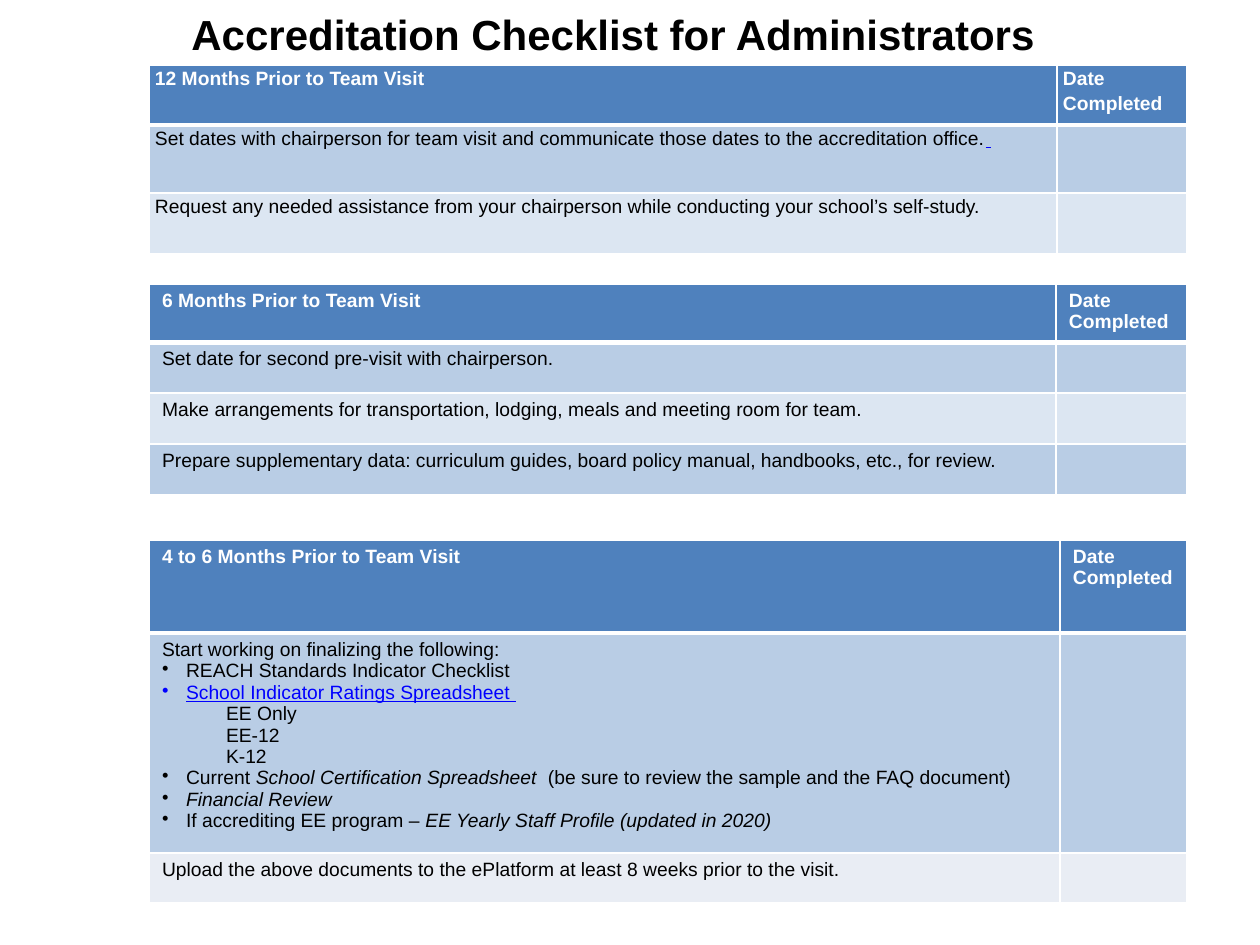
import pptx
import pptx.util
import pptx.dml.color
import pptx.enum.text
import pptx.oxml
import pptx.oxml.ns

PX = 914400 // 126
WHITE = pptx.dml.color.RGBColor(0xFF, 0xFF, 0xFF)
BLACK = pptx.dml.color.RGBColor(0x00, 0x00, 0x00)
LINK_BLUE = pptx.dml.color.RGBColor(0x00, 0x00, 0xFF)
HEADER_BLUE = pptx.dml.color.RGBColor(0x4F, 0x81, 0xBD)
MID_BLUE = pptx.dml.color.RGBColor(0xB9, 0xCD, 0xE5)
PALE_BLUE = pptx.dml.color.RGBColor(0xDC, 0xE6, 0xF2)
PALE_GREY = pptx.dml.color.RGBColor(0xE9, 0xED, 0xF4)

TABLE_LEFT, TABLE_WIDTH = 149, 1038
BULLET_INDENT, SUB_INDENT = 24, 64


def add_run(paragraph, text, size, color, style=""):
    run = paragraph.add_run()
    run.text = text
    run.font.name = "Arial"
    run.font.size = pptx.util.Pt(size)
    run.font.color.rgb = color
    run.font.bold = "bold" in style
    run.font.italic = "italic" in style
    run.font.underline = "underline" in style


def add_borders(cell, bottom_width):
    properties = cell._tc.get_or_add_tcPr()
    for side, width in (("L", 1), ("R", 1), ("T", 1), ("B", bottom_width)):
        properties.append(pptx.oxml.parse_xml(
            f'<a:ln{side} {pptx.oxml.ns.nsdecls("a")} w="{pptx.util.Pt(width)}">'
            f'<a:solidFill><a:srgbClr val="{WHITE}"/></a:solidFill></a:ln{side}>'))


presentation = pptx.Presentation()
presentation.slide_width = pptx.util.Inches(10)
presentation.slide_height = pptx.util.Inches(7.5)
slide = presentation.slides.add_slide(presentation.slide_layouts[6])

# Title
title = slide.shapes.add_textbox(179 * PX, 0, 1018 * PX, 86 * PX)
title.text_frame.word_wrap = True
title.text_frame.margin_top = 9 * PX
title.text_frame.vertical_anchor = pptx.enum.text.MSO_ANCHOR.TOP
add_run(title.text_frame.paragraphs[0], "Accreditation Checklist for Administrators",
        24, BLACK, "bold")

# Paragraphs are (layout, runs); runs are (text, colour, style)
documents = [
    ("plain", [("Start working on finalizing the following:", BLACK, "")]),
    ("bullet", [("REACH Standards Indicator Checklist", BLACK, "")]),
    ("bullet", [("School Indicator Ratings Spreadsheet ", LINK_BLUE, "underline")]),
    ("sub", [("EE Only", BLACK, "")]),
    ("sub", [("EE-12", BLACK, "")]),
    ("sub", [("K-12", BLACK, "")]),
    ("bullet", [("Current ", BLACK, ""),
                ("School Certification Spreadsheet  ", BLACK, "italic"),
                ("(be sure to review the sample and the FAQ document)", BLACK, "")]),
    ("bullet", [("Financial Review", BLACK, "italic")]),
    ("bullet", [("If accrediting EE program – ", BLACK, ""),
                ("EE Yearly Staff Profile (updated in 2020)", BLACK, "italic")]),
]
set_dates = [("plain", [
    ("Set dates with chairperson for team visit and communicate those dates "
     "to the accreditation office.", BLACK, ""),
    (" ", LINK_BLUE, "underline")])]

# Checklists: top, date column width, side margin, top margin, line spacing,
# heading, header height, rows of (height, fill, content)
checklists = [
    (65, 130, 6, 0, 1.15, "12 Months Prior to Team Visit", 60, [
        (68, MID_BLUE, set_dates),
        (61, PALE_BLUE, "Request any needed assistance from your chairperson while "
                        "conducting your school’s self-study."),
    ]),
    (284, 131, 13, 6, 1, "6 Months Prior to Team Visit", 54, [
        (51, MID_BLUE, "Set date for second pre-visit with chairperson."),
        (51, PALE_BLUE, "Make arrangements for transportation, lodging, meals and "
                        "meeting room for team."),
        (51, MID_BLUE, "Prepare supplementary data: curriculum guides, board policy "
                       "manual, handbooks, etc., for review."),
    ]),
    (540, 127, 13, 6, 1, "4 to 6 Months Prior to Team Visit", 93, [
        (206, MID_BLUE, documents),
        (50, PALE_GREY, "Upload the above documents to the ePlatform at least 8 weeks "
                        "prior to the visit."),
    ]),
]

for (top, date_width, side_margin, top_margin, spacing,
     heading, header_height, items) in checklists:
    rows = [(header_height, HEADER_BLUE, heading, "Date Completed")]
    rows += [(height, fill, content, "") for height, fill, content in items]
    table = slide.shapes.add_table(
        len(rows), 2, TABLE_LEFT * PX, top * PX, TABLE_WIDTH * PX,
        sum(row[0] for row in rows) * PX).table
    table.columns[0].width = (TABLE_WIDTH - date_width) * PX
    table.columns[1].width = date_width * PX

    for row_index, (height, fill, *contents) in enumerate(rows):
        table.rows[row_index].height = height * PX
        is_header = row_index == 0
        for column_index, content in enumerate(contents):
            cell = table.cell(row_index, column_index)
            add_borders(cell, 3 if is_header else 1)
            cell.fill.solid()
            cell.fill.fore_color.rgb = fill
            cell.margin_left = cell.margin_right = side_margin * PX
            cell.margin_top = cell.margin_bottom = top_margin * PX
            if not content:
                cell.text_frame.paragraphs[0].font.size = pptx.util.Pt(11)
                continue
            if isinstance(content, str):
                color, style = (WHITE, "bold") if is_header else (BLACK, "")
                content = [("plain", [(content, color, style)])]

            for index, (layout, runs) in enumerate(content):
                frame = cell.text_frame
                paragraph = frame.add_paragraph() if index else frame.paragraphs[0]
                paragraph.line_spacing = spacing
                properties = paragraph._p.get_or_add_pPr()
                if layout == "bullet":
                    properties.set("marL", str(BULLET_INDENT * PX))
                    properties.set("indent", str(-BULLET_INDENT * PX))
                    properties.append(pptx.oxml.parse_xml(
                        f'<a:buChar {pptx.oxml.ns.nsdecls("a")} char="•"/>'))
                elif layout == "sub":
                    properties.set("marL", str(SUB_INDENT * PX))
                for text, color, style in runs:
                    add_run(paragraph, text, 11, color, style)

presentation.save("out.pptx")
